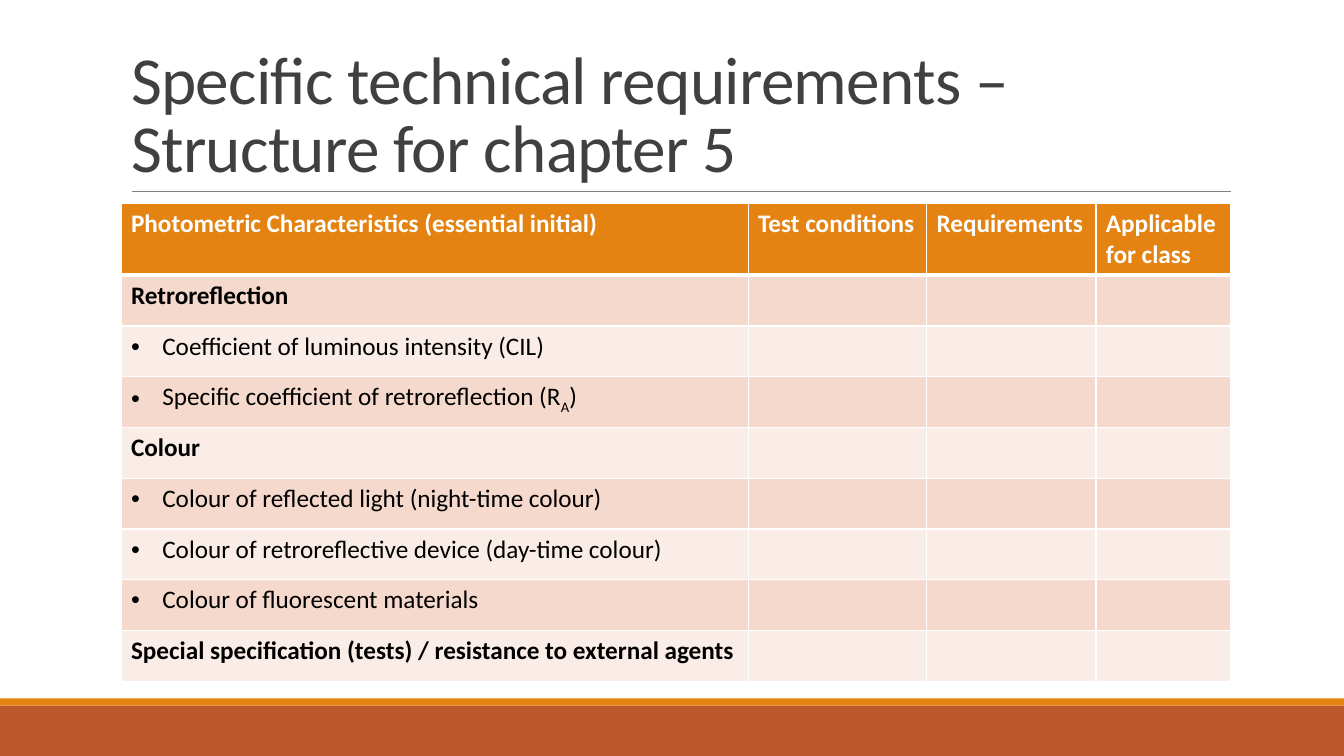
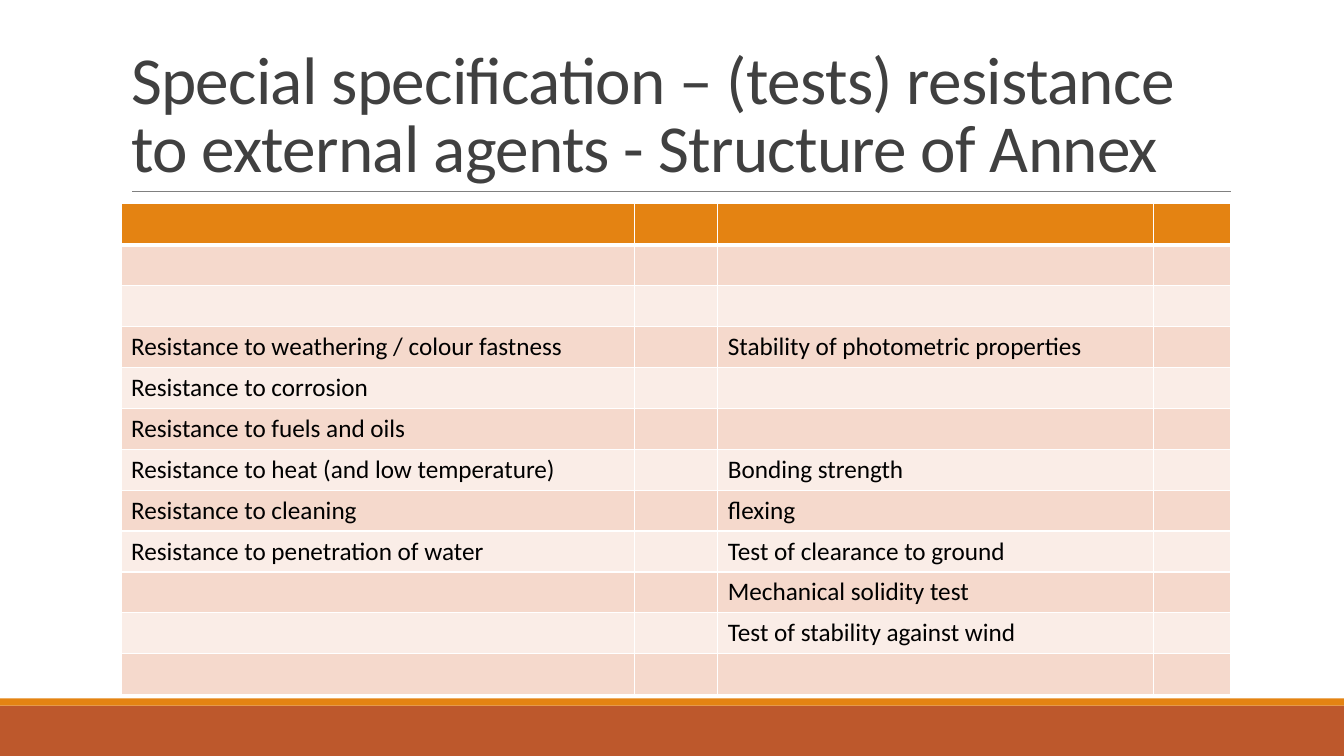
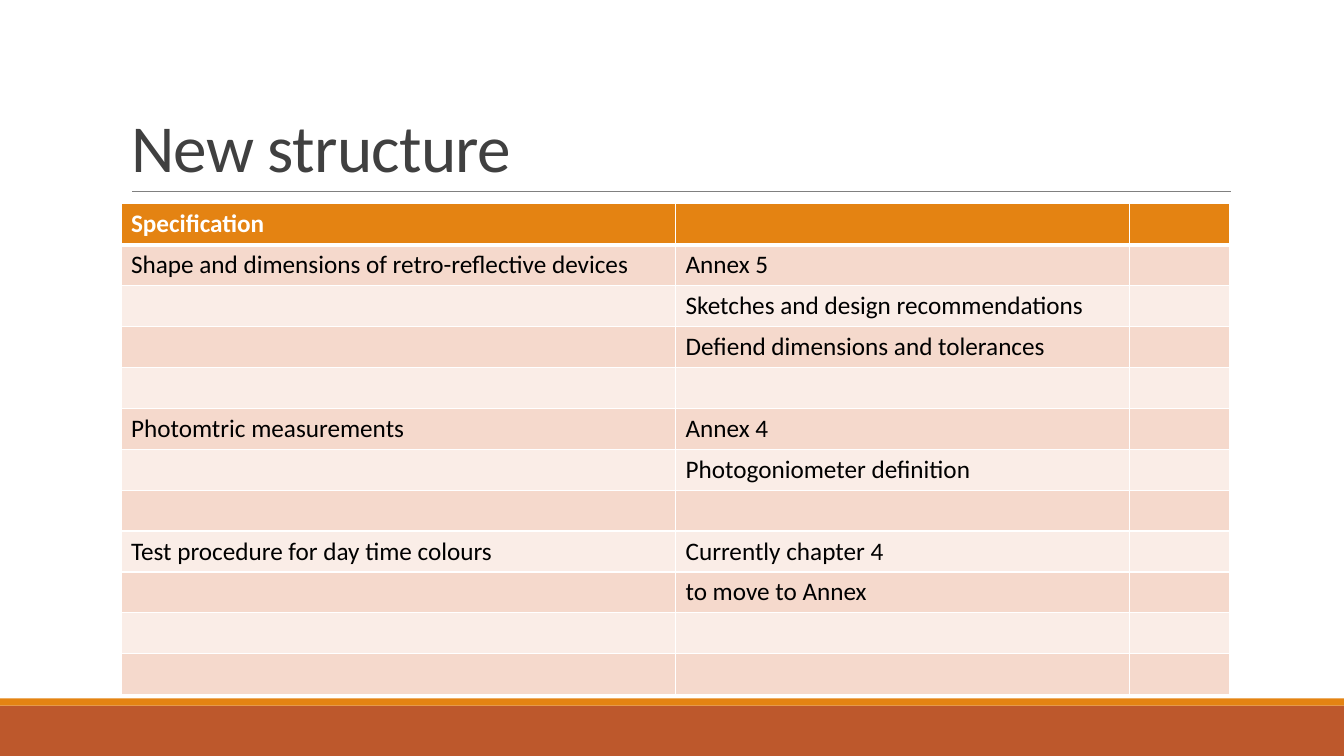
from dataclasses import dataclass

from lxml.etree import SubElement
from pptx import Presentation
from pptx.dml.color import RGBColor
from pptx.enum.shapes import MSO_CONNECTOR, MSO_SHAPE
from pptx.enum.text import MSO_ANCHOR, MSO_AUTO_SIZE, PP_ALIGN
from pptx.oxml.ns import qn
from pptx.util import Inches, Pt


@dataclass(frozen=True)
class Theme:
    font: str = "Calibri"
    title_size: int = 48
    table_size: int = 18
    title: str = "404040"
    text: str = "000000"
    white: str = "FFFFFF"
    rule: str = "808080"
    orange: str = "E48312"
    rust: str = "BD582C"
    row_bands: tuple = ("F5D9CC", "FAEDE7")


@dataclass(frozen=True)
class Entry:
    """A table entry that is a heading or a bulleted item."""
    text: str
    bold: bool = False
    bullet: bool = False
    subscript: str = ""
    after: str = ""


def heading(text):
    return Entry(text, bold=True)


def item(text, subscript="", after=""):
    return Entry(text, bullet=True, subscript=subscript, after=after)


class Deck:
    def __init__(self, theme):
        self.theme = theme
        self.presentation = Presentation()
        self.presentation.slide_width = Inches(13.33)
        self.presentation.slide_height = Inches(7.5)
        self.layout = self.presentation.slide_layouts[5]
        self.slide = None
        self.prepare_layout()

    def prepare_layout(self):
        """Keep only the title placeholder and set its place."""
        for placeholder in list(self.layout.placeholders):
            if placeholder.placeholder_format.idx != 0:
                placeholder.element.getparent().remove(placeholder.element)
                continue
            placeholder.left, placeholder.top = Inches(1.2), Inches(0.31)
            placeholder.width, placeholder.height = Inches(11), Inches(1.59)

    def add_slide(self, title):
        self.slide = self.presentation.slides.add_slide(self.layout)
        self.set_title(title)
        if len(self.presentation.slides) == 1:
            self.add_frame()

    def set_title(self, title):
        frame = self.slide.shapes.title.text_frame
        frame.word_wrap = True
        frame.auto_size = MSO_AUTO_SIZE.NONE
        frame.vertical_anchor = MSO_ANCHOR.BOTTOM
        paragraph = frame.paragraphs[0]
        paragraph.alignment = PP_ALIGN.LEFT
        paragraph.line_spacing = 0.85
        self.set_font(paragraph, self.theme.title_size, self.theme.title)
        run = paragraph.add_run()
        run.text = title
        run._r.get_or_add_rPr().set("spc", "-50")

    def set_font(self, paragraph, size, color, bold=False):
        font = paragraph.font
        font.name, font.size, font.bold = self.theme.font, Pt(size), bold
        font.color.rgb = RGBColor.from_string(color)

    def add_frame(self):
        """Draw the bands and title rule, then share them through the layout."""
        frame = [
            self.add_band(7, 0.5, self.theme.rust),
            self.add_band(6.93, 0.07, self.theme.orange),
            self.add_rule(1.31, 12.21, 1.9),
        ]
        for shape in frame:
            self.layout.shapes.element.append(shape.element)

    def add_band(self, top, height, color):
        band = self.slide.shapes.add_shape(
            MSO_SHAPE.RECTANGLE, 0, Inches(top),
            self.presentation.slide_width, Inches(height))
        band.shadow.inherit = False
        band.fill.solid()
        band.fill.fore_color.rgb = RGBColor.from_string(color)
        band.line.fill.background()
        return band

    def add_rule(self, left, right, top):
        rule = self.slide.shapes.add_connector(
            MSO_CONNECTOR.STRAIGHT, Inches(left), Inches(top),
            Inches(right), Inches(top))
        rule.line.color.rgb = RGBColor.from_string(self.theme.rule)
        rule.line.width = Pt(0.5)
        SubElement(rule.element.spPr, qn("a:effectLst"))
        return rule

    def add_table(self, widths, rows, height, header_height):
        """Below the header, the rows share the height equally."""
        table = self.slide.shapes.add_table(
            len(rows), len(widths), Inches(1.2), Inches(2.02),
            Inches(sum(widths)), Inches(height)).table
        for column, width in zip(table.columns, widths):
            column.width = Inches(width)
        row_height = (height - header_height) / (len(rows) - 1)
        for row_index, entries in enumerate(rows):
            table.rows[row_index].height = Inches(
                row_height if row_index else header_height)
            for column_index in range(len(widths)):
                entry = entries[column_index] if column_index < len(entries) else ""
                self.fill_cell(table.cell(row_index, column_index), entry, row_index)

    def fill_cell(self, cell, entry, row_index):
        theme = self.theme
        is_header = row_index == 0
        if isinstance(entry, str):
            entry = Entry(entry, bold=is_header)
        # Borders come before the fill in the cell properties
        self.add_border(cell, "lnL", 1)
        self.add_border(cell, "lnR", 1)
        self.add_border(cell, "lnT", 3 if row_index == 1 else 1)
        self.add_border(cell, "lnB", 3 if is_header else 1)
        color = theme.orange if is_header else theme.row_bands[(row_index - 1) % 2]
        cell.fill.solid()
        cell.fill.fore_color.rgb = RGBColor.from_string(color)
        # Text
        paragraph = cell.text_frame.paragraphs[0]
        if entry.bullet:
            self.add_bullet(paragraph)
        self.set_font(paragraph, theme.table_size,
                      theme.white if is_header else theme.text, entry.bold)
        for text in (entry.text, entry.subscript, entry.after):
            if text:
                run = paragraph.add_run()
                run.text = text
                if text == entry.subscript:
                    run._r.get_or_add_rPr().set("baseline", "-25000")

    def add_border(self, cell, side, width):
        properties = cell._tc.get_or_add_tcPr()
        border = SubElement(properties, qn(f"a:{side}"), w=str(Pt(width)))
        fill = SubElement(border, qn("a:solidFill"))
        SubElement(fill, qn("a:srgbClr"), val=self.theme.white)

    def add_bullet(self, paragraph):
        properties = paragraph._p.get_or_add_pPr()
        properties.set("marL", str(Inches(0.31)))
        properties.set("indent", str(-Inches(0.31)))
        SubElement(properties, qn("a:buFont"), typeface="Arial")
        SubElement(properties, qn("a:buChar"), char="•")


def main():
    deck = Deck(Theme())

    # Structure for chapter 5
    deck.add_slide("Specific technical requirements – Structure for chapter 5")
    deck.add_table([6.22, 1.77, 1.68, 1.34], [
        ["Photometric Characteristics (essential initial)", "Test conditions",
         "Requirements", "Applicable for class"],
        [heading("Retroreflection")],
        [item("Coefficient of luminous intensity (CIL)")],
        [item("Specific coefficient of retroreflection (R", "A", ")")],
        [heading("Colour")],
        [item("Colour of reflected light (night-time colour)")],
        [item("Colour of retroreflective device (day-time colour)")],
        [item("Colour of fluorescent materials")],
        [heading("Special specification (tests) / resistance to external agents")],
    ], height=4.74, header_height=0.71)

    # Structure of the annex
    deck.add_slide("Special specification – (tests) resistance to external agents"
                   " - Structure of Annex")
    deck.add_table([5.09, 0.83, 4.32, 0.77], [
        [],
        [],
        [],
        ["Resistance to weathering / colour fastness", "",
         "Stability of photometric properties"],
        ["Resistance to corrosion"],
        ["Resistance to fuels and oils"],
        ["Resistance to heat (and low temperature)", "", "Bonding strength"],
        ["Resistance to cleaning", "", "flexing"],
        ["Resistance to penetration of water", "", "Test of clearance to ground"],
        ["", "", "Mechanical solidity test"],
        ["", "", "Test of stability against wind"],
        [],
    ], height=4.87, header_height=0.41)

    # New structure
    deck.add_slide("New structure")
    deck.add_table([5.5, 4.5, 1], [
        ["Specification"],
        ["Shape and dimensions of retro-reflective devices", "Annex 5"],
        ["", "Sketches and design recommendations"],
        ["", "Defiend dimensions and tolerances"],
        [],
        ["Photomtric measurements", "Annex 4"],
        ["", "Photogoniometer definition"],
        [],
        ["Test procedure for day time colours", "Currently chapter 4"],
        ["", "to move to Annex"],
        [],
        [],
    ], height=4.87, header_height=0.41)

    deck.presentation.save("out.pptx")


if __name__ == "__main__":
    main()
